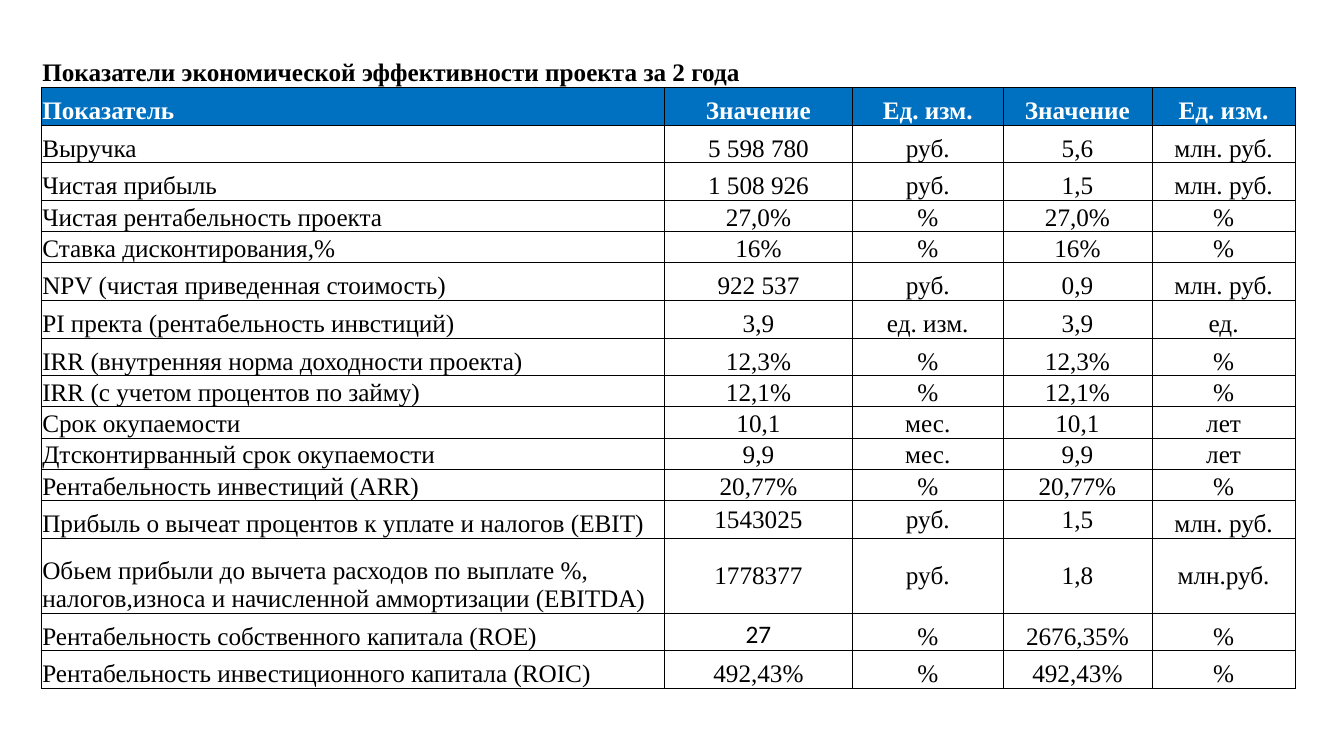
from lxml.etree import SubElement as Sub
from pptx import Presentation
from pptx.dml.color import RGBColor
from pptx.enum.text import MSO_ANCHOR as Anchor, PP_ALIGN as Align
from pptx.oxml.ns import qn
from pptx.util import Pt

PX = 3048
BLACK = RGBColor(0, 0, 0)
WHITE = RGBColor(255, 255, 255)
BLUE = RGBColor(0, 112, 192)
SERIF = "Times New Roman"
SANS = "Calibri"

TITLE, TALL, SHORT, DOUBLE = 140, 112, 93, 223
COLS = [1854, 561, 447, 444, 426]
HEAD = ("Показатель", "Значение", "Ед. изм.", "Значение", "Ед. изм.")
ROWS = [
    (TITLE, ("Показатели экономической эффективности проекта за 2 года", "", "", "", "")),
    (TALL, HEAD),
    (TALL, ("Выручка", "5 598 780", "руб.", "5,6", "млн. руб.")),
    (TALL, ("Чистая прибыль", "1 508 926", "руб.", "1,5", "млн. руб.")),
    (SHORT, ("Чистая рентабельность проекта", "27,0%", "%", "27,0%", "%")),
    (SHORT, ("Ставка дисконтирования,%", "16%", "%", "16%", "%")),
    (TALL, ("NPV (чистая приведенная стоимость)", "922 537", "руб.", "0,9", "млн. руб.")),
    (TALL, ("PI пректа (рентабельность инвстиций)", "3,9", "ед. изм.", "3,9", "ед.")),
    (TALL, ("IRR (внутренняя норма доходности проекта)", "12,3%", "%", "12,3%", "%")),
    (SHORT, ("IRR (с учетом процентов по займу)", "12,1%", "%", "12,1%", "%")),
    (SHORT, ("Срок окупаемости", "10,1", "мес.", "10,1", "лет")),
    (SHORT, ("Дтсконтирванный срок окупаемости", "9,9", "мес.", "9,9", "лет")),
    (SHORT, ("Рентабельность инвестиций (ARR)", "20,77%", "%", "20,77%", "%")),
    (TALL, ("Прибыль о вычеат процентов к уплате и налогов (EBIT)",
            "1543025", "руб.", "1,5", "млн. руб.")),
    (DOUBLE, ("Обьем прибыли до вычета расходов по выплате %, "
              "налогов,износа и начисленной аммортизации (EBITDA)",
              "1778377", "руб.", "1,8", "млн.руб.")),
    (TALL, ("Рентабельность собственного капитала (ROE)", "27", "%", "2676,35%", "%")),
    (TALL, ("Рентабельность инвестиционного капитала (ROIC)",
            "492,43%", "%", "492,43%", "%")),
]
EBIT, EBITDA, ROE = 13, 14, 15
MIDDLE = {(EBIT, col) for col in (1, 2, 3)} | {(EBITDA, col) for col in (1, 2, 3, 4)}
CELL = {"margin_left": 3 * PX, "margin_right": 3 * PX, "margin_top": 3 * PX,
        "margin_bottom": 0}


def apply(target, values):
    for name, value in values.items():
        setattr(target, name, value)


def add_edges(cell, shown):
    props = cell._tc.get_or_add_tcPr()
    for side in ("lnL", "lnR", "lnT", "lnB"):
        line = Sub(props, qn(f"a:{side}"), w=str(Pt(0.5)))
        if side in shown:
            fill = Sub(line, qn("a:solidFill"))
            Sub(fill, qn("a:srgbClr"), val=str(BLACK))
        else:
            Sub(line, qn("a:noFill"))


def fill_cell(cell, text, row, col):
    title, head = row == 0, row == 1
    add_edges(cell, ("lnB",) if title else ("lnL", "lnR", "lnT", "lnB"))
    if head:
        cell.fill.solid()
        cell.fill.fore_color.rgb = BLUE
    else:
        cell.fill.background()
    anchor = Anchor.MIDDLE if (row, col) in MIDDLE else Anchor.BOTTOM
    apply(cell, CELL | {"vertical_anchor": anchor})
    if not text:
        return
    para = cell.text_frame.paragraphs[0]
    para.alignment = Align.CENTER if col else Align.LEFT
    run = para.add_run()
    run.text = text
    apply(run.font, {"size": Pt(18), "bold": title or head,
                     "name": SANS if (row, col) == (ROE, 1) else SERIF})
    run.font.color.rgb = WHITE if head else BLACK


def add_grid(slide, left, top):
    high = sum(height for height, _ in ROWS)
    frame = slide.shapes.add_table(len(ROWS), len(COLS), left * PX, top * PX,
                                   sum(COLS) * PX, high * PX)
    table = frame.table
    apply(table, {"first_row": False, "horz_banding": False})
    for col, width in enumerate(COLS):
        table.columns[col].width = width * PX
    for row, (height, texts) in enumerate(ROWS):
        table.rows[row].height = height * PX
        for col, text in enumerate(texts):
            fill_cell(table.cell(row, col), text, row, col)
    table.cell(0, 0).merge(table.cell(0, 1))


def main():
    deck = Presentation()
    apply(deck, {"slide_width": 4000 * PX, "slide_height": 2250 * PX})
    slide = deck.slides.add_slide(deck.slide_layouts[6])
    add_grid(slide, 123, 120)
    deck.save("out.pptx")


if __name__ == "__main__":
    main()
